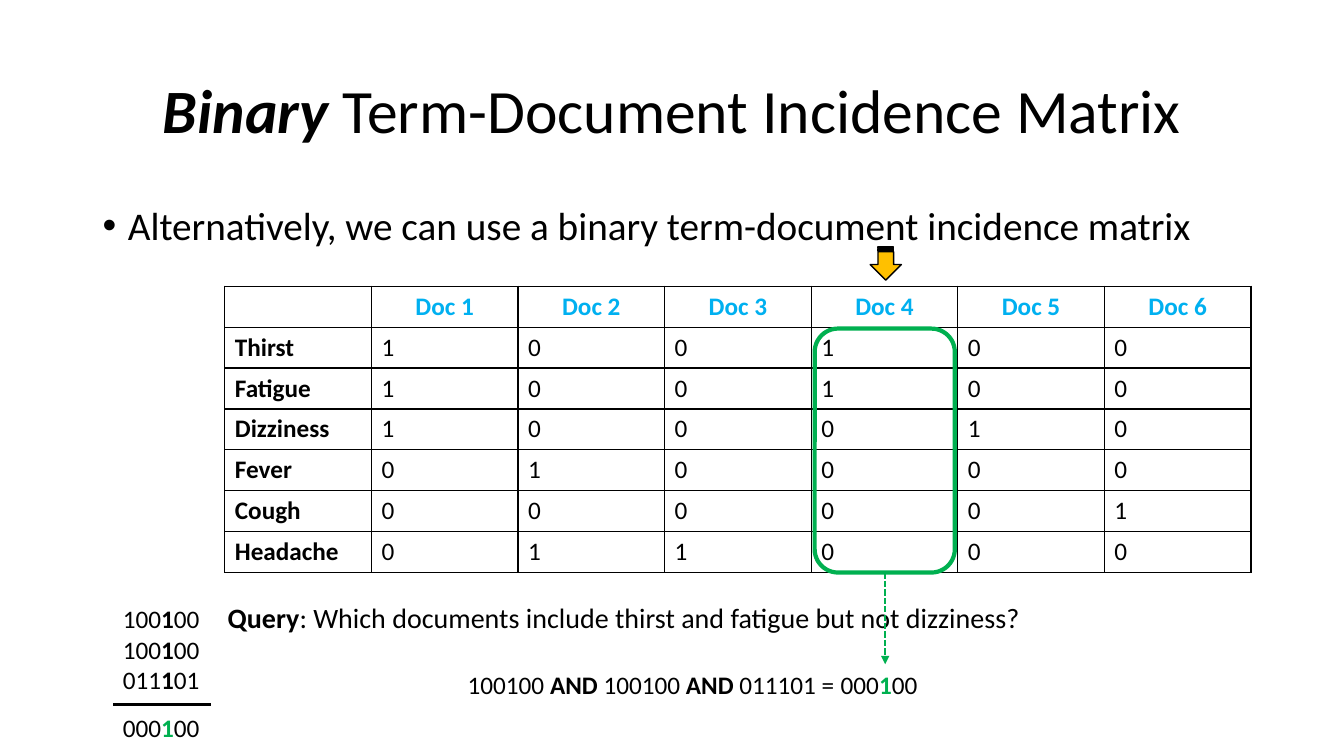
from lxml import etree
from pptx import Presentation
from pptx.dml.color import RGBColor
from pptx.enum.dml import MSO_LINE
from pptx.enum.shapes import MSO_CONNECTOR, MSO_SHAPE
from pptx.enum.text import MSO_ANCHOR, PP_ALIGN
from pptx.oxml.ns import qn
from pptx.util import Inches, Pt

BLACK = RGBColor(0x00, 0x00, 0x00)
BLUE = RGBColor(0x00, 0xB0, 0xF0)
GREEN = RGBColor(0x00, 0xB0, 0x50)
AMBER = RGBColor(0xFF, 0xC0, 0x00)
CENTER, LEFT = PP_ALIGN.CENTER, PP_ALIGN.LEFT
MIDDLE = MSO_ANCHOR.MIDDLE
STRAIGHT = MSO_CONNECTOR.STRAIGHT
ROUNDED = MSO_SHAPE.ROUNDED_RECTANGLE
STRIPED_ARROW = MSO_SHAPE.STRIPED_RIGHT_ARROW
DASHED = MSO_LINE.SQUARE_DOT

TITLE_ONLY = 5
BOLD = {"bold": True}
BOLD_ITALIC = {"bold": True, "italic": True}
HIT = {"bold": True, "color": GREEN}

DOCS = [f"Doc {n}" for n in range(1, 7)]
INCIDENCE = {
    "Thirst": "100100",
    "Fatigue": "100100",
    "Dizziness": "100010",
    "Fever": "010000",
    "Cough": "000001",
    "Headache": "011000",
}
QUERY_VECTORS = ["100100", "100100", "011101"]
RESULT = "000100"


def mark_doc4(vector, style):
    """Split a bit vector into runs so that its fourth bit carries the style."""
    return [(vector[:3], {}), (vector[3], style), (vector[4:], {})]


class MatrixSlide:
    font = "Calibri"

    def __init__(self, presentation):
        self.slide = presentation.slides.add_slide(presentation.slide_layouts[TITLE_ONLY])
        self.shapes = self.slide.shapes

    def fill_paragraph(self, paragraph, runs, size, color=BLACK, bold=False, align=LEFT):
        paragraph.alignment = align
        font = paragraph.font
        font.name, font.size, font.bold = self.font, Pt(size), bold
        font.color.rgb = color
        for text, style in runs:
            run = paragraph.add_run()
            run.text = text
            if "bold" in style:
                run.font.bold = style["bold"]
            if "italic" in style:
                run.font.italic = style["italic"]
            if "color" in style:
                run.font.color.rgb = style["color"]

    def title(self, box, runs):
        title = self.shapes.title
        title.left, title.top, title.width, title.height = map(Inches, box)
        title.text_frame.vertical_anchor = MIDDLE
        paragraph = title.text_frame.paragraphs[0]
        paragraph.line_spacing = 0.9
        self.fill_paragraph(paragraph, runs, 44, align=CENTER)

    def text(self, box, lines, size=18, wrap=False):
        frame = self.shapes.add_textbox(*map(Inches, box)).text_frame
        frame.word_wrap = wrap
        for index, runs in enumerate(lines):
            paragraph = frame.add_paragraph() if index else frame.paragraphs[0]
            self.fill_paragraph(paragraph, runs, size)
        return frame

    def bullet(self, box, sentence):
        frame = self.text(box, [], wrap=True)
        paragraph = frame.paragraphs[0]
        paragraph.line_spacing = 0.9
        properties = paragraph._p.get_or_add_pPr()
        properties.set("marL", str(Inches(0.25)))
        properties.set("indent", str(Inches(-0.25)))
        etree.SubElement(properties, qn("a:buFont"), typeface="Arial")
        etree.SubElement(properties, qn("a:buChar"), char="•")
        self.fill_paragraph(paragraph, [(sentence, {})], 28)

    def border(self, cell):
        properties = cell._tc.get_or_add_tcPr()
        for position, side in enumerate(("lnL", "lnR", "lnT", "lnB")):
            line = etree.Element(qn(f"a:{side}"), w=str(Pt(1)))
            fill = etree.SubElement(line, qn("a:solidFill"))
            etree.SubElement(fill, qn("a:srgbClr"), val=str(BLACK))
            properties.insert(position, line)

    def matrix(self, box, docs, incidence):
        rows = [["", *docs]] + [[term, *bits] for term, bits in incidence.items()]
        table = self.shapes.add_table(len(rows), len(rows[0]), *map(Inches, box)).table
        table.first_row = table.horz_banding = False
        for r, row in enumerate(rows):
            for c, value in enumerate(row):
                cell = table.cell(r, c)
                cell.fill.background()
                self.border(cell)
                header = r == 0
                self.fill_paragraph(
                    cell.text_frame.paragraphs[0],
                    [(value, {})] if value else [],
                    18,
                    color=BLUE if header else BLACK,
                    bold=header or c == 0,
                    align=CENTER if header else LEFT,
                )

    def shape(self, kind, box, line, width, fill=None, rotation=0):
        shape = self.shapes.add_shape(kind, *map(Inches, box))
        shape.shadow.inherit = False
        shape.rotation = rotation
        shape.line.color.rgb = line
        shape.line.width = Pt(width)
        if fill is None:
            shape.fill.background()
        else:
            shape.fill.solid()
            shape.fill.fore_color.rgb = fill

    def line(self, start, end, color, width, dash=None, arrow=False):
        connector = self.shapes.add_connector(STRAIGHT, *map(Inches, start + end))
        connector.line.color.rgb = color
        connector.line.width = Pt(width)
        if dash is not None:
            connector.line.dash_style = dash
        properties = connector._element.spPr
        if arrow:
            etree.SubElement(properties.find(qn("a:ln")), qn("a:tailEnd"), type="triangle")
        etree.SubElement(properties, qn("a:effectLst"))


def main():
    presentation = Presentation()
    presentation.slide_width, presentation.slide_height = Inches(13.33), Inches(7.5)
    slide = MatrixSlide(presentation)

    slide.title((0.92, 0.4, 11.5, 1.45),
                [("Binary", BOLD_ITALIC), (" Term-Document Incidence Matrix", {})])
    slide.matrix((2.23, 2.84, 10.18, 2.84), DOCS, INCIDENCE)

    slide.text((2.16, 5.91, 8.14, 0.44), [[
        ("Query", BOLD),
        (": Which documents include thirst and fatigue but not dizziness?", {}),
    ]], size=20)
    first, second, third = QUERY_VECTORS
    slide.text((4.54, 6.59, 3.88, 0.4), [[
        (f"{first} ", {}), ("AND ", BOLD),
        (f"{second} ", {}), ("AND ", BOLD),
        (f"{third} =", {}),
    ]])

    slide.text((1.12, 5.94, 0.97, 1.62), [mark_doc4(v, BOLD) for v in QUERY_VECTORS])
    slide.line((2.09, 6.99), (1.12, 6.99), BLACK, 2.25)
    for left, top in ((1.12, 7.02), (8.24, 6.59)):
        slide.text((left, top, 0.97, 0.4), [mark_doc4(RESULT, HIT)])

    slide.shape(ROUNDED, (8.08, 3.26, 1.39, 2.42), GREEN, 3)
    slide.line((8.78, 5.68), (8.78, 6.59), GREEN, 1.5, dash=DASHED, arrow=True)
    slide.shape(STRIPED_ARROW, (8.62, 2.46, 0.33, 0.31), BLACK, 1, fill=AMBER, rotation=90)
    slide.bullet((0.92, 2, 11.72, 5.1),
                 "Alternatively, we can use a binary term-document incidence matrix")

    presentation.save("out.pptx")


if __name__ == "__main__":
    main()
